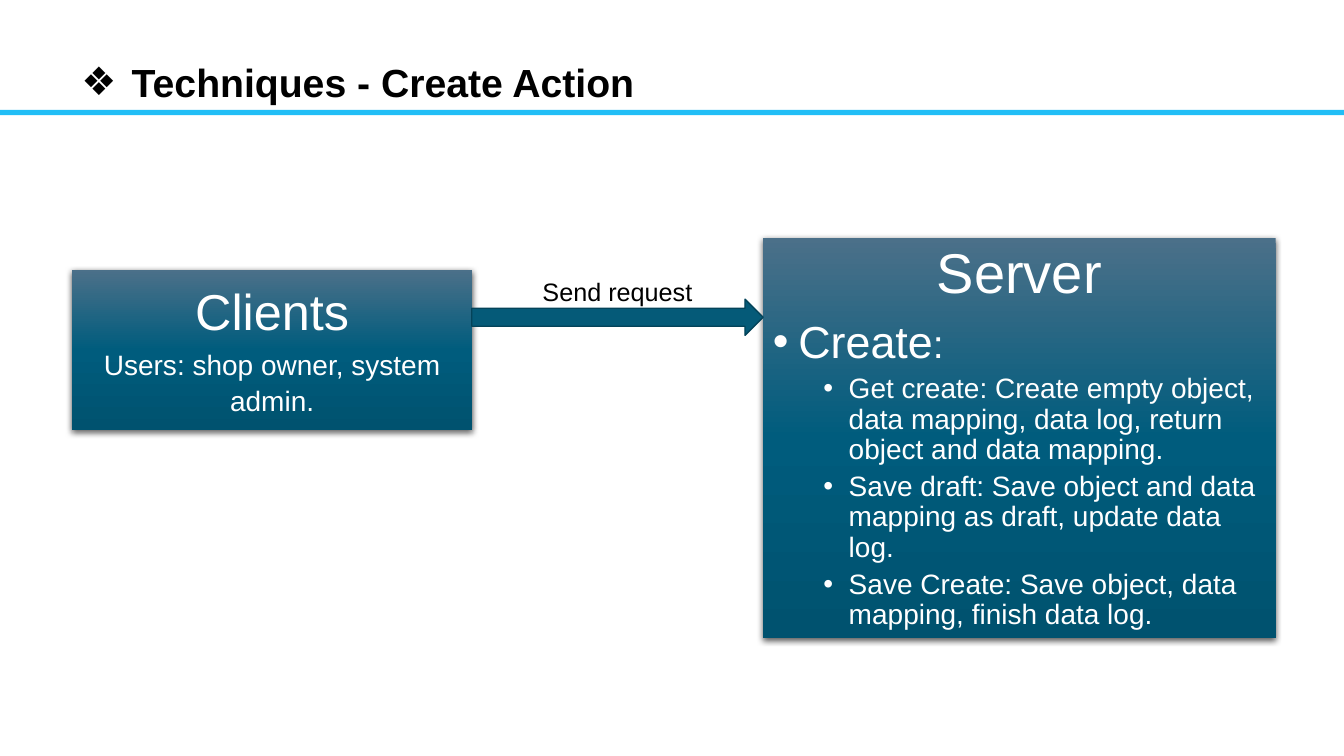
from dataclasses import dataclass

import pptx
import pptx.dml.color
import pptx.enum.shapes
import pptx.enum.text
import pptx.oxml
import pptx.oxml.ns
import pptx.util
from pptx.util import Cm

SHAPE = pptx.enum.shapes.MSO_SHAPE
ALIGN = pptx.enum.text.PP_ALIGN
ANCHOR = pptx.enum.text.MSO_ANCHOR


@dataclass(frozen=True)
class Theme:
    font: str = "Arial"
    black: str = "000000"
    white: str = "FFFFFF"
    rule: str = "21BEF6"
    arrow: str = "055A78"
    arrow_line: str = "044359"
    panel_stops: tuple = ((0, "4B7089"), (50, "005C7D"), (100, "00526F"))
    title: int = 28
    server: int = 40
    clients: int = 36
    action: int = 32
    colon: int = 28
    detail: int = 20
    label: int = 18


THEME = Theme()


@dataclass(frozen=True)
class Area:
    left: float
    top: float
    width: float
    height: float

    def lengths(self) -> tuple:
        return Cm(self.left), Cm(self.top), Cm(self.width), Cm(self.height)


@dataclass(frozen=True)
class Panel:
    area: Area
    anchor: ANCHOR
    top_inset: float


RULE = Area(0, 2.77, 33.87, 0.13)
TITLE = Area(1.8, 1.35, 20.93, 1.45)
CLIENTS = Panel(Area(1.82, 6.81, 10.08, 4.03), ANCHOR.TOP, 0.25)
SERVER = Panel(Area(19.23, 5.99, 12.92, 10.08), ANCHOR.MIDDLE, 0.13)
ARROW = Area(11.89, 7.54, 7.34, 0.91)
LABEL = Area(11.89, 6.83, 7.34, 1.02)

SERVER_DETAILS = (
    "Get create: Create empty object, data mapping, data log, return object and data mapping.",
    "Save draft: Save object and data mapping as draft, update data log.",
    "Save Create: Save object, data mapping, finish data log.",
)


def color(code: str) -> pptx.dml.color.RGBColor:
    return pptx.dml.color.RGBColor.from_string(code)


def add_xml(parent, markup: str) -> None:
    namespace = pptx.oxml.ns.nsdecls("a")
    parent.append(pptx.oxml.parse_xml(markup.replace(" ", f" {namespace} ", 1)))


def add_span(para, text: str, *, size: float, code: str = THEME.white, bold: bool = False) -> None:
    span = para.add_run()
    span.text = text
    span.font.name = THEME.font
    span.font.size = pptx.util.Pt(size)
    span.font.bold = bold
    span.font.color.rgb = color(code)


def add_para(frame, text: str, *, size: float, code: str = THEME.white, bold: bool = False,
             align: ALIGN = ALIGN.LEFT, before: float = 0, spacing: float = 1.0,
             bullet: str = "", margin: float = 0, hanging: float = 0, level: int = 0):
    first = not frame.paragraphs[0].runs
    para = frame.paragraphs[0] if first else frame.add_paragraph()
    para.alignment = align
    para.level = level
    para.line_spacing = spacing
    para.space_before = pptx.util.Pt(0 if first else before)
    if bullet:
        properties = para._p.get_or_add_pPr()
        properties.set("marL", str(Cm(margin)))
        properties.set("indent", str(-Cm(hanging)))
        add_xml(properties, f'<a:buFont typeface="{THEME.font}"/>')
        add_xml(properties, f'<a:buChar char="{bullet}"/>')
    add_span(para, text, size=size, code=code, bold=bold)
    return para


def add_text_box(page, area: Area):
    frame = page.shapes.add_textbox(*area.lengths()).text_frame
    frame.word_wrap = True
    return frame


def add_block(page, kind: SHAPE, area: Area, *, fill: str, line: str = ""):
    block = page.shapes.add_shape(kind, *area.lengths())
    block.shadow.inherit = False
    block.fill.solid()
    block.fill.fore_color.rgb = color(fill)
    if line:
        block.line.color.rgb = color(line)
        block.line.width = pptx.util.Pt(1)
    else:
        block.line.fill.background()
    return block


def add_panel(page, panel: Panel):
    box = add_block(page, SHAPE.RECTANGLE, panel.area, fill=THEME.panel_stops[0][1])
    properties = box.element.spPr
    solid = properties.find(pptx.oxml.ns.qn("a:solidFill"))
    stops = "".join(f'<a:gs pos="{place * 1000}"><a:srgbClr val="{code}"/></a:gs>'
                    for place, code in THEME.panel_stops)
    add_xml(properties, f'<a:gradFill rotWithShape="1"><a:gsLst>{stops}</a:gsLst>'
                        '<a:lin ang="5400000" scaled="0"/></a:gradFill>')
    properties.replace(solid, properties[-1])
    effects = properties.find(pptx.oxml.ns.qn("a:effectLst"))
    add_xml(effects, f'<a:outerShdw blurRad="{pptx.util.Pt(4.5)}" dist="{pptx.util.Pt(1.5)}" '
                     'dir="5400000" rotWithShape="0">'
                     f'<a:srgbClr val="{THEME.black}"><a:alpha val="63000"/></a:srgbClr>'
                     '</a:outerShdw>')
    frame = box.text_frame
    frame.word_wrap = True
    frame.vertical_anchor = panel.anchor
    frame.margin_top = Cm(panel.top_inset)
    return frame


def main() -> None:
    deck = pptx.Presentation()
    deck.slide_width, deck.slide_height = Cm(33.87), Cm(19.05)
    page = deck.slides.add_slide(deck.slide_layouts[6])

    add_block(page, SHAPE.RECTANGLE, RULE, fill=THEME.rule)
    add_para(add_text_box(page, TITLE), "Techniques - Create Action", size=THEME.title,
             code=THEME.black, bold=True, bullet="❖", margin=1.27, hanging=1.27)

    clients = add_panel(page, CLIENTS)
    add_para(clients, "Clients", size=THEME.clients, align=ALIGN.CENTER)
    add_para(clients, "Users: shop owner, system admin.", size=THEME.detail,
             align=ALIGN.CENTER, before=4, spacing=1.05)

    server = add_panel(page, SERVER)
    add_para(server, "Server", size=THEME.server, align=ALIGN.CENTER, spacing=0.9)
    action = add_para(server, "Create", size=THEME.action, before=10, spacing=0.9,
                      bullet="•", margin=0.64, hanging=0.64)
    add_span(action, ":", size=THEME.colon)
    for detail in SERVER_DETAILS:
        add_para(server, detail, size=THEME.detail, before=5, spacing=0.9,
                 bullet="•", margin=1.91, hanging=0.64, level=1)

    add_block(page, SHAPE.RIGHT_ARROW, ARROW, fill=THEME.arrow, line=THEME.arrow_line)
    add_para(add_text_box(page, LABEL), "Send request", size=THEME.label,
             code=THEME.black, align=ALIGN.CENTER)

    deck.save("out.pptx")


if __name__ == "__main__":
    main()
